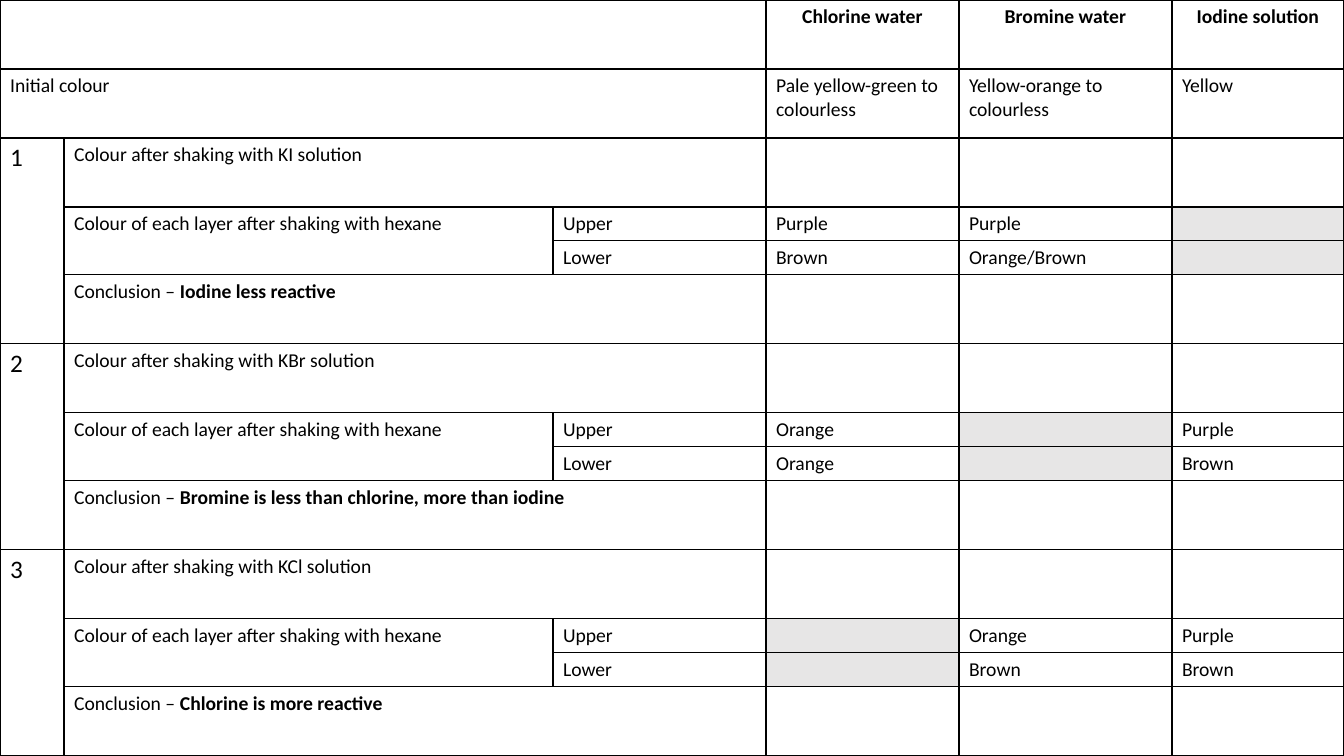
from dataclasses import dataclass
from lxml.etree import SubElement
from pptx import Presentation
from pptx.dml.color import RGBColor
from pptx.enum.text import PP_ALIGN
from pptx.oxml.ns import qn
from pptx.util import Pt

HEADS = ["Chlorine water", "Bromine water", "Iodine solution"]
START = ["Pale yellow-green to colourless", "Yellow-orange to colourless", "Yellow"]
TESTS = [
    ("KI", ["Purple", "Purple", None], ["Brown", "Orange/Brown", None],
     "Iodine less reactive"),
    ("KBr", ["Orange", None, "Purple"], ["Orange", None, "Brown"],
     "Bromine is less than chlorine, more than iodine"),
    ("KCl", [None, "Orange", "Purple"], [None, "Brown", "Brown"],
     "Chlorine is more reactive"),
]
COLS = [64, 489, 213, 193, 213, 172]
TALL, LOW = 69, 34
ROWS = [TALL, TALL] + [TALL, LOW, LOW, TALL] * len(TESTS)
PX = 914400 / 100.8


@dataclass
class Theme:
    font: str = "Calibri"
    ink: str = "000000"
    paper: str = "FFFFFF"
    shade: str = "E7E6E6"
    body: int = 14
    number: int = 18
    line: int = 1


LOOK = Theme()


def emu(px):
    return round(px * PX)


def paint(cell, color):
    cell.fill.solid()
    cell.fill.fore_color.rgb = RGBColor.from_string(color)


def frame(cell):
    props = cell._tc.get_or_add_tcPr()
    for side in ("lnL", "lnR", "lnT", "lnB"):
        line = SubElement(props, qn("a:" + side), w=str(Pt(LOOK.line)))
        fill = SubElement(line, qn("a:solidFill"))
        SubElement(fill, qn("a:srgbClr"), val=LOOK.ink)
    para = cell.text_frame.paragraphs[0]
    SubElement(para._p, qn("a:endParaRPr"), sz=str(LOOK.body * 100))
    paint(cell, LOOK.paper)


def write(cell, text, bold=False, size=LOOK.body, align=None):
    para = cell.text_frame.paragraphs[0]
    para.alignment = align
    run = para.add_run()
    run.text = text
    run.font.name = LOOK.font
    run.font.size = Pt(size)
    run.font.bold = bold
    run.font.color.rgb = RGBColor.from_string(LOOK.ink)


def fill_row(grid, row, values):
    for col, value in enumerate(values, 3):
        if value is None:
            paint(grid.cell(row, col), LOOK.shade)
        else:
            write(grid.cell(row, col), value)


def add_test(grid, index, test):
    salt, upper, lower, result = test
    top = 2 + 4 * index
    last = top + 3
    grid.cell(top, 0).merge(grid.cell(last, 0))
    grid.cell(top, 1).merge(grid.cell(top, 2))
    grid.cell(top + 1, 1).merge(grid.cell(top + 2, 1))
    grid.cell(last, 1).merge(grid.cell(last, 2))
    write(grid.cell(top, 0), str(index + 1), size=LOOK.number)
    write(grid.cell(top, 1), f"Colour after shaking with {salt} solution")
    write(grid.cell(top + 1, 1), "Colour of each layer after shaking with hexane")
    for row, (name, values) in enumerate([("Upper", upper), ("Lower", lower)], top + 1):
        write(grid.cell(row, 2), name)
        fill_row(grid, row, values)
    write(grid.cell(last, 1), "Conclusion – ")
    write(grid.cell(last, 1), result, bold=True)


def main():
    deck = Presentation()
    deck.slide_width, deck.slide_height = emu(sum(COLS)), emu(sum(ROWS))
    slide = deck.slides.add_slide(deck.slide_layouts[6])
    grid = slide.shapes.add_table(len(ROWS), len(COLS), 0, 0,
                                  deck.slide_width, deck.slide_height).table
    grid.first_row = grid.horz_banding = False
    for col, width in zip(grid.columns, COLS):
        col.width = emu(width)
    for row, height in zip(grid.rows, ROWS):
        row.height = emu(height)
    for cell in grid.iter_cells():
        frame(cell)
    for row in (0, 1):
        grid.cell(row, 0).merge(grid.cell(row, 2))
    for col, head in enumerate(HEADS, 3):
        write(grid.cell(0, col), head, bold=True, align=PP_ALIGN.CENTER)
    write(grid.cell(1, 0), "Initial colour")
    fill_row(grid, 1, START)
    for index, test in enumerate(TESTS):
        add_test(grid, index, test)
    deck.save("out.pptx")


if __name__ == "__main__":
    main()
